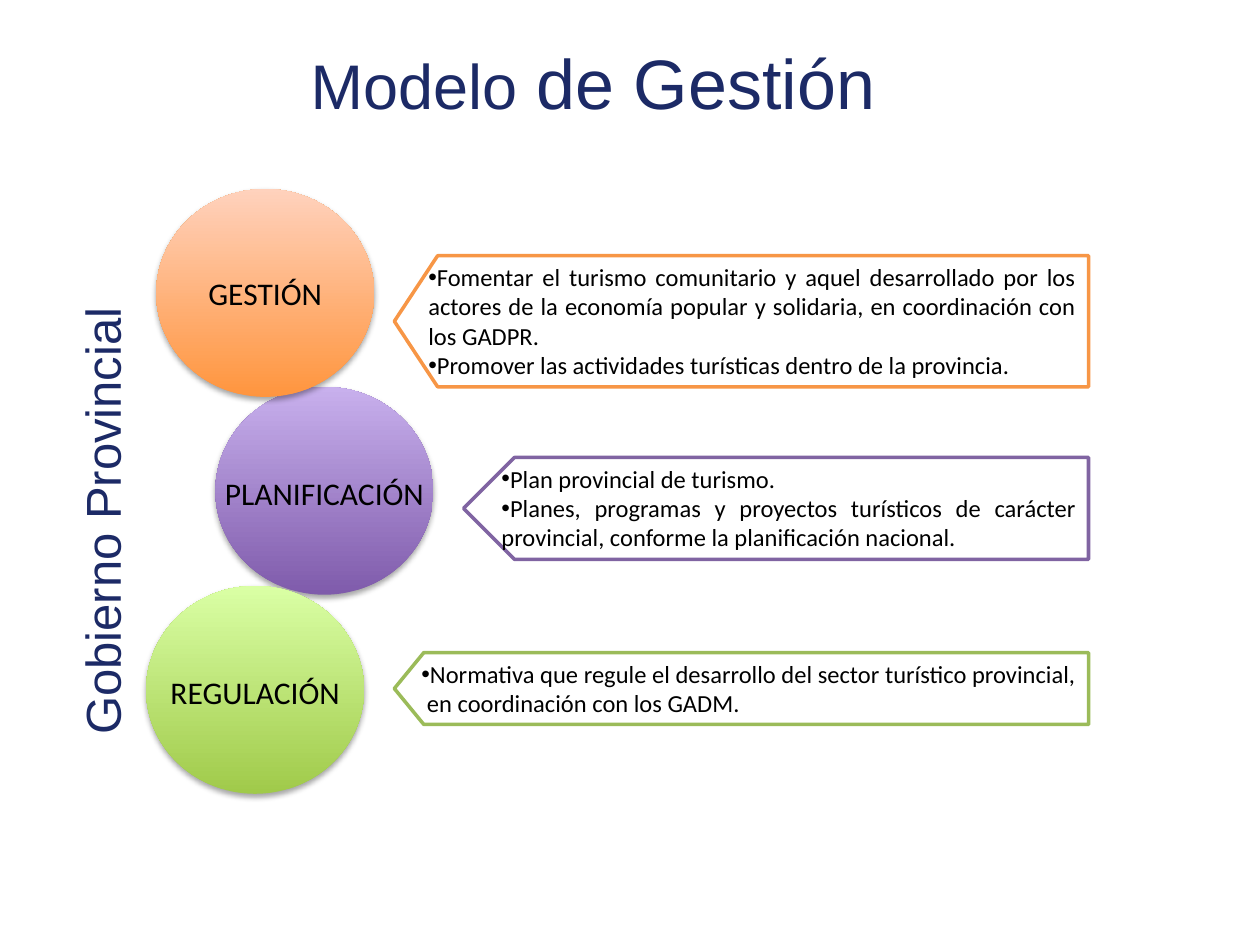
from dataclasses import dataclass

from lxml import etree
from pptx import Presentation
from pptx.dml.color import RGBColor
from pptx.enum.shapes import MSO_SHAPE
from pptx.enum.text import MSO_ANCHOR, PP_ALIGN
from pptx.oxml import parse_xml
from pptx.oxml.ns import nsdecls, qn
from pptx.util import Inches, Pt

OVAL, PLATE = MSO_SHAPE.OVAL, MSO_SHAPE.PENTAGON
CENTER, JUSTIFY = PP_ALIGN.CENTER, PP_ALIGN.JUSTIFY
TOP, MIDDLE = MSO_ANCHOR.TOP, MSO_ANCHOR.MIDDLE


@dataclass(frozen=True)
class Theme:
    heading_font: str = "Arial"
    body_font: str = "Calibri"
    navy: str = "1C2A66"
    black: str = "000000"
    white: str = "FFFFFF"
    title_size: int = 40
    title_start_size: int = 36
    side_size: int = 28
    label_size: int = 18
    bullet_size: int = 14
    outline: int = 2


THEME = Theme()
CIRCLE_WIDTH, CIRCLE_HEIGHT = 1.73, 1.65
PLATE_RIGHT = 8.64

# Circles from back to front: label, left, top, dark, light, label in own box
CIRCLES = [
    ("PLANIFICACIÓN", 1.71, 3.07, "7F5BAB", "C8B0ED", True),
    ("REGULACIÓN", 1.16, 4.65, "A0CA4A", "DAFFA5", True),
    ("GESTIÓN", 1.24, 1.5, "FF953E", "FFD2BD", False),
]

# Plates: left, top, height, point depth, outline colour, bullets
PLATES = [
    (3.68, 3.63, 0.81, 0.5, "8064A2", [
        "Plan provincial de turismo.",
        "Planes, programas y proyectos turísticos de carácter provincial, "
        "conforme la planificación nacional.",
    ]),
    (3.13, 5.18, 0.57, 0.41, "9BBB59", [
        "Normativa que regule el desarrollo del sector turístico provincial,  "
        "en coordinación con los GADM.",
    ]),
    (3.13, 2.03, 1.04, 0.33, "F79646", [
        "Fomentar el turismo comunitario y aquel desarrollado por los actores "
        "de la economía popular y solidaria, en coordinación con los GADPR.",
        "Promover las actividades turísticas dentro de la provincia.",
    ]),
]


def style_font(font, name, size, color):
    font.name = name
    font.size = Pt(size)
    font.color.rgb = RGBColor.from_string(color)


def write_centered(shape, text, name, size, color, anchor=MIDDLE):
    frame = shape.text_frame
    frame.word_wrap = True
    frame.vertical_anchor = anchor
    paragraph = frame.paragraphs[0]
    paragraph.alignment = CENTER
    paragraph.add_run().text = text
    style_font(paragraph.font, name, size, color)
    return paragraph


def add_text(slide, box, *text_style):
    shape = slide.shapes.add_textbox(*map(Inches, box))
    return shape, write_centered(shape, *text_style)


def add_soft_shadow(shape):
    properties = shape._element.spPr
    for effects in properties.findall(qn("a:effectLst")):
        properties.remove(effects)
    properties.append(parse_xml(
        f'<a:effectLst {nsdecls("a")}><a:outerShdw blurRad="{Pt(3.1)}" '
        f'dist="{Pt(1.8)}" dir="5400000" rotWithShape="0">'
        f'<a:srgbClr val="{THEME.black}"><a:alpha val="35000"/></a:srgbClr>'
        '</a:outerShdw></a:effectLst>'))


def add_circle(slide, left, top, dark, light):
    shape = slide.shapes.add_shape(
        OVAL, Inches(left), Inches(top), Inches(CIRCLE_WIDTH), Inches(CIRCLE_HEIGHT))
    shape.line.fill.background()
    shape.fill.gradient()
    shape.fill.gradient_angle = 90
    for stop, color in zip(shape.fill.gradient_stops, (dark, light)):
        stop.color.rgb = RGBColor.from_string(color)
    add_soft_shadow(shape)
    return shape


def add_bullet(paragraph, text):
    properties = paragraph._p.get_or_add_pPr()
    etree.SubElement(properties, qn("a:buFont"), typeface=THEME.heading_font)
    etree.SubElement(properties, qn("a:buChar"), char="•")
    paragraph.text = text
    paragraph.alignment = JUSTIFY
    style_font(paragraph.font, THEME.body_font, THEME.bullet_size, THEME.black)


def add_plate(slide, left, top, height, depth, color, bullets):
    shape = slide.shapes.add_shape(
        PLATE, Inches(left), Inches(top), Inches(PLATE_RIGHT - left), Inches(height))
    shape.adjustments[0] = depth
    shape._element.spPr.find(qn("a:xfrm")).set("flipH", "1")
    shape.shadow.inherit = False
    shape.fill.solid()
    shape.fill.fore_color.rgb = RGBColor.from_string(THEME.white)
    shape.line.color.rgb = RGBColor.from_string(color)
    shape.line.width = Pt(THEME.outline)
    frame = shape.text_frame
    frame.word_wrap = True
    frame.vertical_anchor = TOP
    for index, text in enumerate(bullets):
        add_bullet(frame.add_paragraph() if index else frame.paragraphs[0], text)


def main():
    presentation = Presentation()
    presentation.slide_width, presentation.slide_height = Inches(10), Inches(7.5)
    slide = presentation.slides.add_slide(presentation.slide_layouts[6])

    # Title and rotated side heading
    _, paragraph = add_text(slide, (0.58, 0.17, 8.25, 0.95), "Modelo",
                            THEME.heading_font, THEME.title_size, THEME.navy)
    paragraph.runs[0].font.size = Pt(THEME.title_start_size)
    paragraph.add_run().text = " de Gestión"
    side, _ = add_text(slide, (-1.83, 3.66, 5.27, 0.95), "Gobierno Provincial",
                       THEME.heading_font, THEME.side_size, THEME.navy)
    side.rotation = 270

    # Circles, then the labels that are wider than their circle's text area
    label_style = (THEME.body_font, THEME.label_size, THEME.black)
    for label, left, top, dark, light, own_box in CIRCLES:
        circle = add_circle(slide, left, top, dark, light)
        if not own_box:
            write_centered(circle, label, *label_style)
    for label, left, top, _, _, own_box in CIRCLES:
        if own_box:
            add_text(slide, (left - 0.08, top + 0.64, 1.89, 0.4), label,
                     *label_style, TOP)

    # Bulleted plates
    for plate in PLATES:
        add_plate(slide, *plate)

    presentation.save("out.pptx")


if __name__ == "__main__":
    main()
